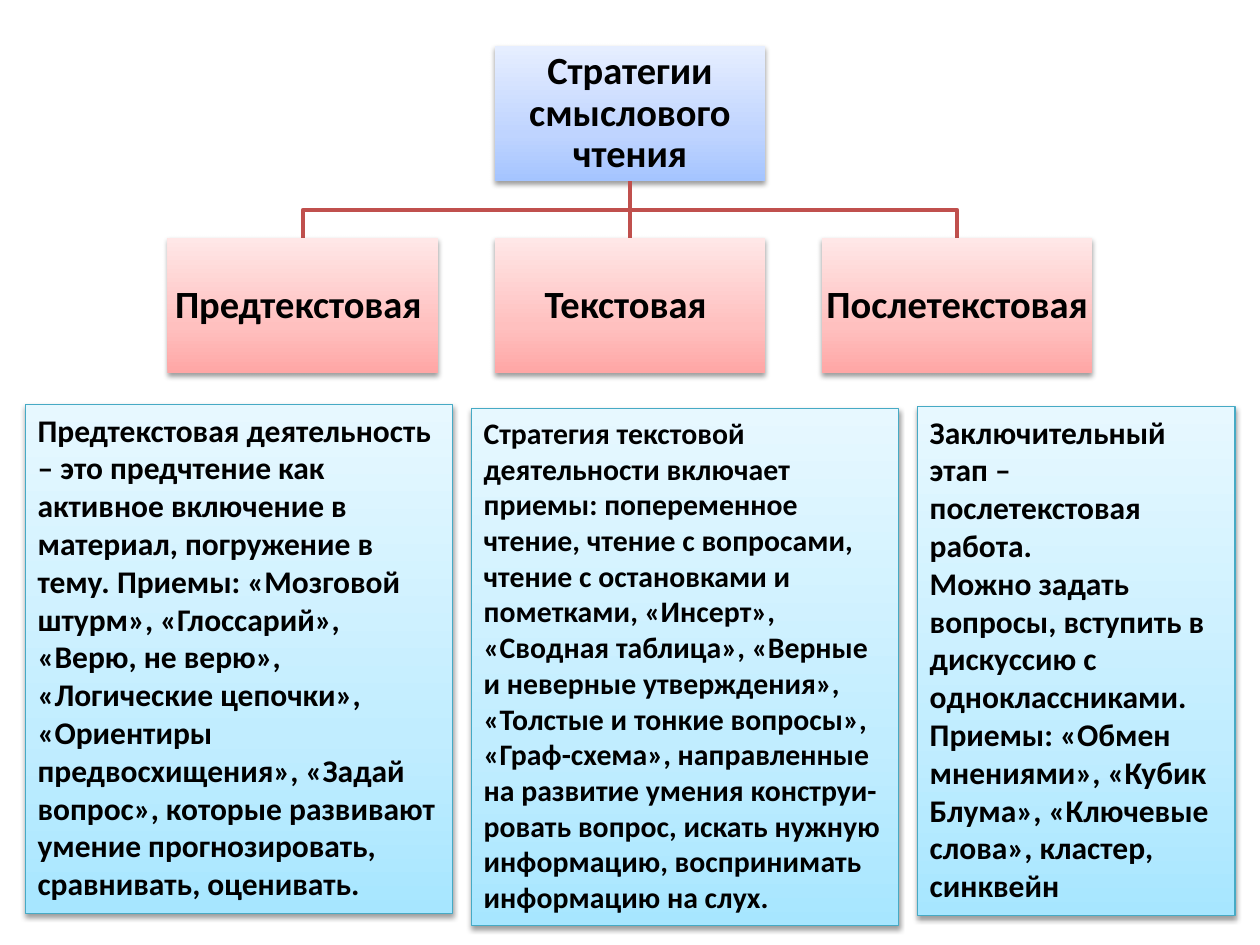
from lxml.etree import SubElement
from pptx import Presentation
from pptx.dml.color import RGBColor
from pptx.enum.shapes import MSO_CONNECTOR, MSO_SHAPE
from pptx.enum.text import MSO_ANCHOR, MSO_AUTO_SIZE, PP_ALIGN
from pptx.oxml.ns import qn
from pptx.util import Pt

FONT = "Calibri"
COLORS = {"text": "000000", "branch": "C0504D", "note_edge": "46AAC5"}
# Gradient colours run from the bottom edge up to the top edge.
GRADIENTS = {
    "root": ("A4C4FF", "BFD4FF", "E6EEFF"),
    "stage": ("FFA6A5", "FFC0BF", "FFE7E7"),
    "note": ("A7E6FF", "C1EDFF", "E7F8FF"),
}
STOPS = (0, 35, 100)

ROOT = "Стратегии смыслового чтения"
STAGES = ["Предтекстовая ", "Текстовая ", "Послетекстовая"]
NOTES = [  # left, top, width, height, text size, paragraphs
    (14.4, 231.1, 244.1, 290.9, 18, [
        "Предтекстовая деятельность – это предчтение как активное включение в материал, "
        "погружение в тему. Приемы: «Мозговой штурм», «Глоссарий», «Верю, не верю», "
        "«Логические цепочки»,",
        "«Ориентиры предвосхищения», «Задай вопрос», которые развивают умение "
        "прогнозировать, сравнивать, оценивать.",
    ]),
    (269.3, 233.4, 244.1, 295.6, 17, [
        "Стратегия текстовой деятельности включает приемы: попеременное чтение, чтение "
        "с вопросами, чтение с остановками и пометками, «Инсерт», «Сводная таблица», "
        "«Верные и неверные утверждения», «Толстые и тонкие вопросы», «Граф-схема», "
        "направленные на развитие умения конструи-ровать вопрос, искать нужную "
        "информацию, воспринимать информацию на слух.",
    ]),
    (524.2, 232.3, 181.6, 290.9, 18, [
        "Заключительный этап – послетекстовая работа.",
        "Можно задать вопросы, вступить в дискуссию с одноклассниками.",
        "Приемы: «Обмен мнениями», «Кубик Блума», «Ключевые слова», кластер, синквейн",
    ]),
]

SLIDE_WIDTH, SLIDE_HEIGHT = 720, 540
CENTER = SLIDE_WIDTH / 2
BOX_WIDTH, BOX_HEIGHT = 154.6, 77.3
STAGE_STEP = 187
ROOT_TOP, STAGE_TOP = 26.4, 136.1
ROOT_BOTTOM = ROOT_TOP + BOX_HEIGHT
BRANCH_Y = (ROOT_BOTTOM + STAGE_TOP) / 2


def rgb(name):
    return RGBColor.from_string(COLORS[name])


def paint_gradient(shape, colors):
    shape.fill.gradient()
    gradient = shape._element.spPr.find(qn("a:gradFill"))
    stop_list = gradient.find(qn("a:gsLst"))
    for stop in list(stop_list):
        stop_list.remove(stop)
    for position, color in zip(STOPS, colors):
        stop = SubElement(stop_list, qn("a:gs"), pos=str(position * 1000))
        SubElement(stop, qn("a:srgbClr"), val=color)
    gradient.find(qn("a:lin")).set("ang", str(270 * 60000))


def add_shadow(shape):
    shape.shadow.inherit = False
    effects = shape._element.spPr.find(qn("a:effectLst"))
    shadow = SubElement(effects, qn("a:outerShdw"), blurRad=str(Pt(3.1)),
                        dist=str(Pt(1.6)), dir=str(90 * 60000), rotWithShape="0")
    color = SubElement(shadow, qn("a:srgbClr"), val="000000")
    SubElement(color, qn("a:alpha"), val="38000")


def add_box(page, frame, kind, paragraphs, size):
    box = page.shapes.add_shape(MSO_SHAPE.RECTANGLE, *map(Pt, frame))
    paint_gradient(box, GRADIENTS[kind])
    add_shadow(box)
    box.line.fill.background()
    text_frame = box.text_frame
    text_frame.word_wrap = True
    text_frame.text = "\n".join(paragraphs)
    for para in text_frame.paragraphs:
        para.alignment = PP_ALIGN.LEFT
        for span in para.runs:
            span.font.name = FONT
            span.font.size = Pt(size)
            span.font.bold = True
            span.font.color.rgb = rgb("text")
    return box


def add_heading(page, center, top, kind, text):
    frame = (center - BOX_WIDTH / 2, top, BOX_WIDTH, BOX_HEIGHT)
    box = add_box(page, frame, kind, [text], 22)
    text_frame = box.text_frame
    text_frame.vertical_anchor = MSO_ANCHOR.MIDDLE
    text_frame.margin_left = text_frame.margin_right = Pt(1.1)
    text_frame.margin_top = text_frame.margin_bottom = Pt(1.1)
    text_frame.paragraphs[0].alignment = PP_ALIGN.CENTER
    text_frame.paragraphs[0].line_spacing = 0.9
    return box


def add_note(page, left, top, width, height, size, paragraphs):
    note = add_box(page, (left, top, width, height), "note", paragraphs, size)
    note.line.color.rgb = rgb("note_edge")
    note.line.width = Pt(0.75)
    note.text_frame.vertical_anchor = MSO_ANCHOR.TOP
    note.text_frame.auto_size = MSO_AUTO_SIZE.SHAPE_TO_FIT_TEXT


def style_branch(branch):
    branch.line.color.rgb = rgb("branch")
    branch.line.width = Pt(2)


def add_elbow(page, end_x):
    corners = [(CENTER, BRANCH_Y), (end_x, BRANCH_Y), (end_x, STAGE_TOP)]
    builder = page.shapes.build_freeform(Pt(CENTER), Pt(ROOT_BOTTOM))
    builder.add_line_segments([(Pt(x), Pt(y)) for x, y in corners], close=False)
    elbow = builder.convert_to_shape()
    elbow.fill.background()
    elbow.shadow.inherit = False
    style_branch(elbow)


def add_trunk(page, upper, lower):
    trunk = page.shapes.add_connector(MSO_CONNECTOR.STRAIGHT, 0, 0, 0, 0)
    trunk.begin_connect(upper, 2)
    trunk.end_connect(lower, 0)
    style_branch(trunk)
    SubElement(trunk._element.spPr, qn("a:effectLst"))


def main():
    deck = Presentation()
    deck.slide_width, deck.slide_height = Pt(SLIDE_WIDTH), Pt(SLIDE_HEIGHT)
    page = deck.slides.add_slide(deck.slide_layouts[6])

    centers = [CENTER + (index - 1) * STAGE_STEP for index in range(len(STAGES))]
    for center in (centers[0], centers[-1]):
        add_elbow(page, center)
    root = add_heading(page, CENTER, ROOT_TOP, "root", ROOT)
    stages = [add_heading(page, center, STAGE_TOP, "stage", text)
              for center, text in zip(centers, STAGES)]
    add_trunk(page, root, stages[1])
    for note in NOTES:
        add_note(page, *note)
    deck.save("out.pptx")


if __name__ == "__main__":
    main()
